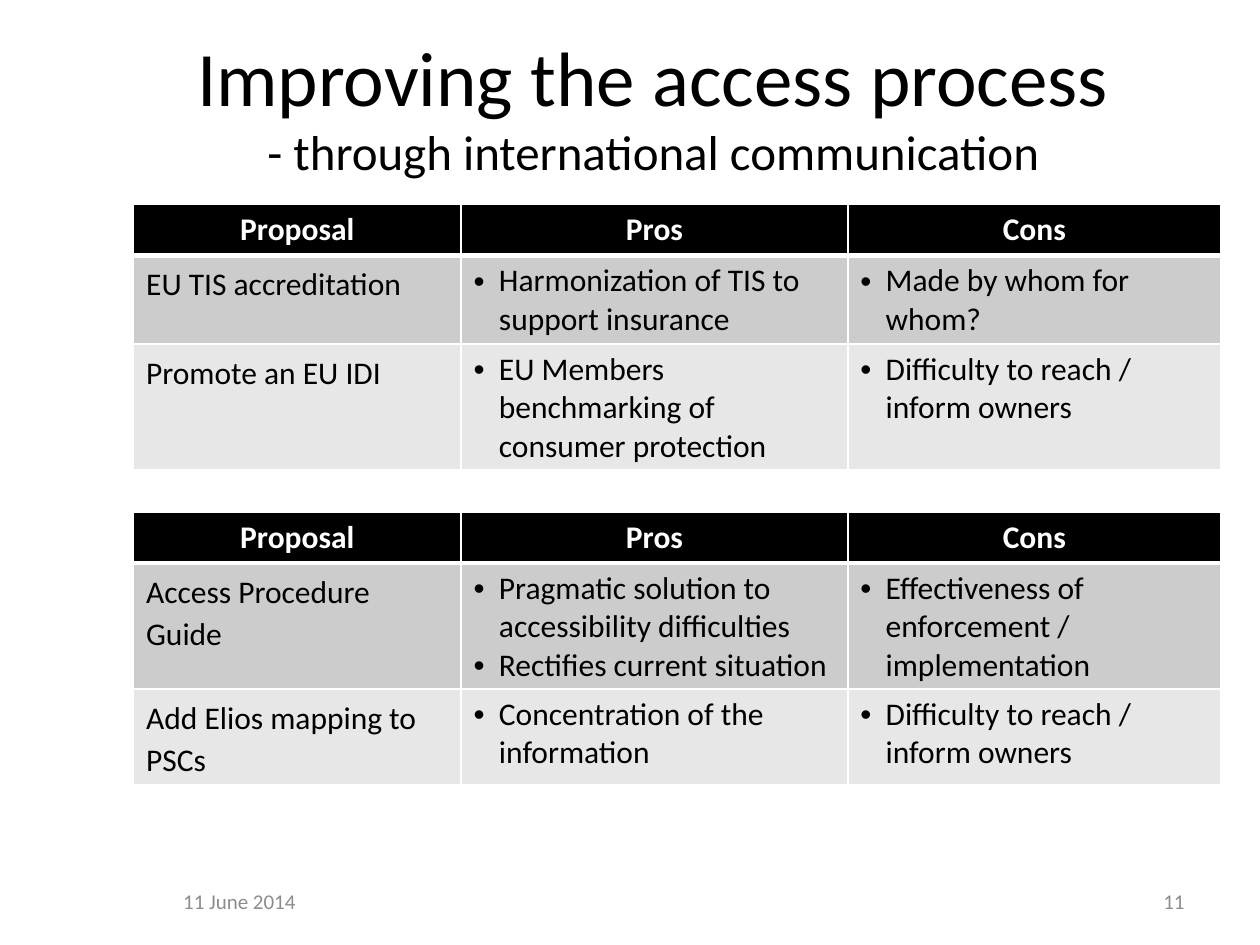
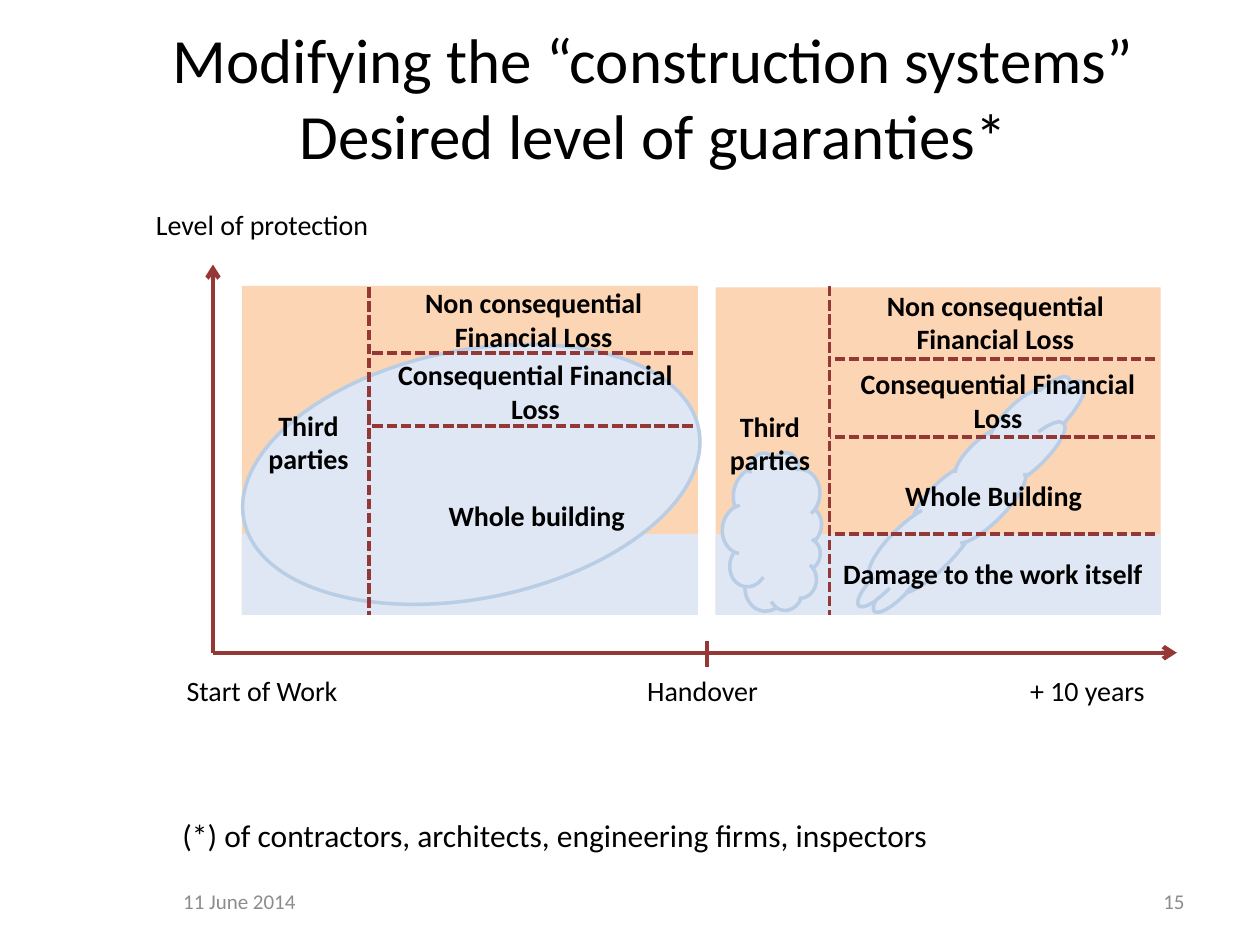
import pptx
import pptx.util
import pptx.dml.color
import pptx.enum.dml
import pptx.enum.shapes
import pptx.enum.text
import pptx.oxml.ns
from lxml import etree

Pt = pptx.util.Pt
SHAPE = pptx.enum.shapes.MSO_SHAPE
ALIGN = pptx.enum.text.PP_ALIGN
ANCHOR = pptx.enum.text.MSO_ANCHOR
BLACK, WHITE, GREY = "000000", "FFFFFF", "8C8C8C"
PEACH, BLUE, EDGE, RED = "FCD5B5", "DFE7F4", "B9CDE5", "953735"
BANDS = [BLACK, "CCCCCC", "E7E7E7"]
HEADS = ["Proposal", "Pros", "Cons"]
COLS = [187.2, 221, 213.1]
ROW = 29.2
BASE = 373
FLOOR, SPLIT = 351.4, 305.3


def color(code):
    return pptx.dml.color.RGBColor.from_string(code)


def apply(item, values):
    for name, value in values.items():
        setattr(item, name, value)


def style(font, size, ink=BLACK, bold=False):
    apply(font, {"name": "Calibri", "size": Pt(size), "bold": bold})
    font.color.rgb = color(ink)


def node(parent, tag, **attrs):
    return etree.SubElement(parent, pptx.oxml.ns.qn(tag), attrs)


def frame(slide, box, anchor=ANCHOR.TOP):
    text = slide.shapes.add_textbox(*map(Pt, box)).text_frame
    apply(text, {"word_wrap": True, "vertical_anchor": anchor})
    return text


def label(slide, box, words, size=16, ink=BLACK, bold=False,
          align=ALIGN.CENTER, anchor=ANCHOR.TOP):
    text = frame(slide, box, anchor)
    text.text = words
    for para in text.paragraphs:
        para.alignment = align
        style(para.font, size, ink, bold)


def title(slide, top, lines):
    para = frame(slide, (62.6, top, 621.4, 90), ANCHOR.MIDDLE).paragraphs[0]
    para.alignment = ALIGN.CENTER
    for index, (words, size) in enumerate(lines):
        if index:
            para.add_line_break()
        run = para.add_run()
        run.text = words
        style(run.font, size)


def footer(slide, number):
    look = {"size": 12, "ink": GREY, "anchor": ANCHOR.MIDDLE}
    label(slide, (65.5, 500.4, 142.6, 28.8), "11 June 2014", **look)
    label(slide, (516.2, 500.4, 167.8, 28.8), number, align=ALIGN.RIGHT, **look)


def border(cell, head):
    props = cell._tc.get_or_add_tcPr()
    for side in "LRTB":
        width = 3 if head and side == "B" else 1
        line = node(props, f"a:ln{side}", w=str(Pt(width)))
        node(node(line, "a:solidFill"), "a:srgbClr", val=WHITE)


def bullet(para):
    props = para._p.get_or_add_pPr()
    apply_indent = {"marL": "182880", "indent": "-182880"}
    for name, value in apply_indent.items():
        props.set(name, value)
    node(props, "a:buFont", typeface="Arial")
    node(props, "a:buChar", char="•")


def table(slide, top, body):
    rows = [HEADS] + body
    grid = slide.shapes.add_table(
        len(rows), len(COLS), Pt(76.3), Pt(top), Pt(sum(COLS)), Pt(ROW * len(rows))).table
    for col, width in zip(grid.columns, COLS):
        col.width = Pt(width)
    for r, row in enumerate(rows):
        grid.rows[r].height = Pt(ROW)
        for c, words in enumerate(row):
            cell = grid.cell(r, c)
            border(cell, r == 0)
            cell.fill.solid()
            cell.fill.fore_color.rgb = color(BANDS[r])
            cell.text = words
            for para in cell.text_frame.paragraphs:
                if r == 0:
                    para.alignment = ALIGN.CENTER
                elif c == 0:
                    para.line_spacing = 1.1
                else:
                    bullet(para)
                style(para.font, 18, BLACK if r else WHITE, r == 0)


def shape(slide, kind, box, fill, edge=None, turn=0):
    item = slide.shapes.add_shape(kind, *map(Pt, box))
    item.shadow.inherit = False
    item.rotation = turn
    item.fill.solid()
    item.fill.fore_color.rgb = color(fill)
    if edge:
        item.line.color.rgb = color(edge)
        item.line.width = Pt(2)
    else:
        item.line.fill.background()


def line(slide, start, end, width=2.5, dash=False, arrow=False):
    item = slide.shapes.add_connector(
        pptx.enum.shapes.MSO_CONNECTOR.STRAIGHT, *map(Pt, start + end))
    item.line.color.rgb = color(RED)
    item.line.width = Pt(width)
    if dash:
        item.line.dash_style = pptx.enum.dml.MSO_LINE.SQUARE_DOT
    if arrow:
        node(item.line._get_or_add_ln(), "a:tailEnd", type="arrow")
    node(item._element.spPr, "a:effectLst")


def panel(slide, left, top, width):
    shape(slide, SHAPE.RECTANGLE, (left, top, width, FLOOR - top), PEACH)
    shape(slide, SHAPE.RECTANGLE, (left, SPLIT, width, FLOOR - SPLIT), BLUE)


def split(slide, left, right, top, levels):
    line(slide, (left, top), (left, FLOOR), 2, dash=True)
    for level in levels:
        line(slide, (right, level), (left, level), 2, dash=True)


def access(slide):
    title(slide, 15.1, [("Improving the access process", 44),
                        ("- through international communication", 28)])
    table(slide, 116.9, [
        ["EU TIS accreditation", "Harmonization of TIS to support insurance",
         "Made by whom for whom?"],
        ["Promote an EU IDI", "EU Members benchmarking of consumer protection",
         "Difficulty to reach / inform owners"]])
    table(slide, 292.5, [
        ["Access Procedure Guide",
         "Pragmatic solution to accessibility difficulties\nRectifies current situation",
         "Effectiveness of enforcement / implementation"],
        ["Add Elios mapping to PSCs", "Concentration of the information",
         "Difficulty to reach / inform owners"]])
    footer(slide, "11")


def levels(slide):
    panel(slide, 409, 164.2, 254.2)
    panel(slide, 138.2, 163.4, 260.6)
    shape(slide, SHAPE.CLOUD, (396, 275, 91.4, 57.6), BLUE, EDGE, 98.2)
    shape(slide, SHAPE.OVAL, (136.8, 200.2, 265, 141.8), BLUE, EDGE, 348.6)
    shape(slide, SHAPE.CLOUD, (465.1, 262.8, 180.7, 40.3), BLUE, EDGE, 315)
    title(slide, 10.1, [("Modifying the “construction systems” "
                         "Desired level of guaranties*", 36)])
    split(slide, 211, 396, 164.2, [201.6, 243.4])
    split(slide, 474.1, 660.2, 163.4, [205.2, 249.8, SPLIT])
    line(slide, (121.7, BASE), (121.7, 151.2), arrow=True)
    line(slide, (121.7, BASE), (672.5, BASE), arrow=True)
    line(slide, (403.9, 380.9), (403.9, 366.5))
    for box, words in [
            ((211, 159.8, 187.9, 46.1), "Non consequential Financial Loss"),
            ((218.9, 200.9, 174.2, 46.1), "Consequential Financial Loss"),
            ((219.6, 281.5, 174.2, 26.6), "Whole building"),
            ((145.4, 229.7, 61.9, 46.1), "Third\nparties"),
            ((409, 230.4, 61.9, 46.1), "Third\nparties"),
            ((474.5, 161.3, 188.6, 46.1), "Non consequential Financial Loss"),
            ((477.4, 205.9, 185.8, 46.1), "Consequential Financial Loss"),
            ((474.5, 270, 186.5, 26.6), "Whole Building"),
            ((468.7, 314.6, 197.3, 26.6), "Damage to the work itself")]:
        label(slide, box, words, bold=True)
    for left, top, width, words in [
            (77.8, 115.2, 144, "Level of protection"),
            (77.8, 381.6, 144, "Start of Work"),
            (340.6, 381.6, 121.7, "Handover"),
            (549.4, 381.6, 144, "+ 10 years")]:
        label(slide, (left, top, width, 26.6), words)
    label(slide, (97.2, 463, 511.2, 28.8),
          "(*) of contractors, architects, engineering firms, inspectors",
          18, align=ALIGN.LEFT)
    footer(slide, "15")


def main():
    deck = pptx.Presentation()
    apply(deck, {"slide_width": Pt(720), "slide_height": Pt(540)})
    for build in (access, levels):
        build(deck.slides.add_slide(deck.slide_layouts[6]))
    deck.save("out.pptx")


if __name__ == "__main__":
    main()
